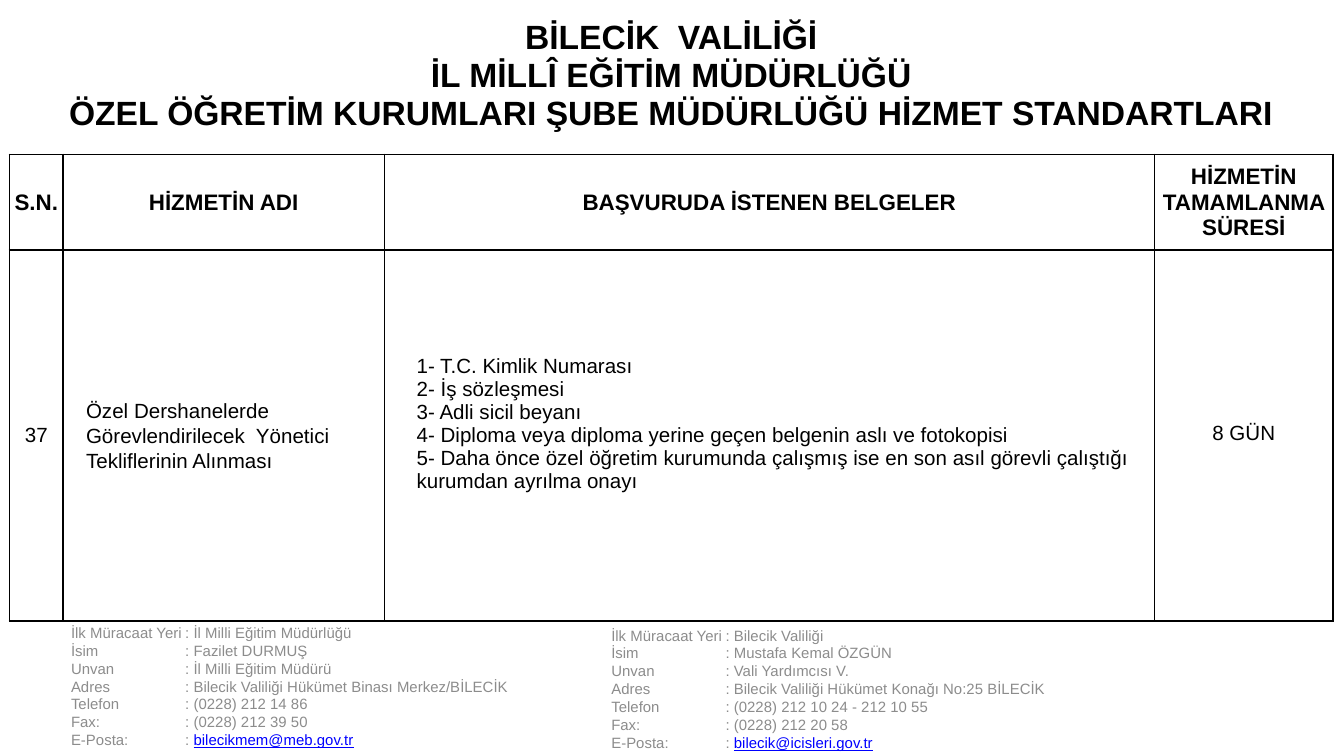
"""Build a service standards slide with one table and two contact blocks."""
from pptx import Presentation
from pptx.dml.color import RGBColor
from pptx.enum.text import MSO_ANCHOR, PP_ALIGN
from pptx.oxml.ns import qn
from pptx.util import Inches, Pt
from lxml.etree import SubElement

BLACK = RGBColor(0, 0, 0)
GRAY = RGBColor(0x8C, 0x8C, 0x8C)
BLUE = RGBColor(0, 0, 0xFF)
PLAIN = "{2D5ABB26-0587-4C30-8999-92F81FD0307C}"

TITLE = ["BİLECİK  VALİLİĞİ", "İL MİLLÎ EĞİTİM MÜDÜRLÜĞÜ",
         "ÖZEL ÖĞRETİM KURUMLARI ŞUBE MÜDÜRLÜĞÜ HİZMET STANDARTLARI"]
HEADS = ["S.N.", "HİZMETİN ADI", "BAŞVURUDA İSTENEN BELGELER",
         "HİZMETİN TAMAMLANMA SÜRESİ"]
NAME = "Özel Dershanelerde Görevlendirilecek  Yönetici Tekliflerinin Alınması"
PAPERS = [
    "1- T.C. Kimlik Numarası",
    "2- İş sözleşmesi",
    "3- Adli sicil beyanı",
    "4- Diploma veya diploma yerine geçen belgenin aslı ve fotokopisi",
    "5- Daha önce özel öğretim kurumunda çalışmış ise en son asıl görevli "
    "çalıştığı kurumdan ayrılma onayı",
]
ROW = [
    (["37"], dict(center=True)),
    ([NAME], dict(indent=0.07, space=1.1)),
    (PAPERS, dict(indent=0.14)),
    (["8 GÜN"], dict(center=True, space=Pt(10))),
]
LABELS = ["İlk Müracaat Yeri", "İsim", "Unvan", "Adres", "Telefon", "Fax:",
          "E-Posta:"]
OFFICES = [
    (0.43, 4.62, ["İl Milli Eğitim Müdürlüğü", "Fazilet DURMUŞ",
                  "İl Milli Eğitim Müdürü",
                  "Bilecik Valiliği Hükümet Binası Merkez/BİLECİK",
                  "(0228) 212 14 86", "(0228) 212 39 50",
                  "bilecikmem@meb.gov.tr"]),
    (4.45, 4.64, ["Bilecik Valiliği", "Mustafa Kemal ÖZGÜN",
                  "Vali Yardımcısı V.",
                  "Bilecik Valiliği Hükümet Konağı No:25 BİLECİK",
                  "(0228) 212 10 24 - 212 10 55", "(0228) 212 20 58",
                  "bilecik@icisleri.gov.tr"]),
]
COLS = [0.4, 2.39, 5.73, 1.33]
ROWS = [1.17, 0.71, 2.76]


def write(frame, lines, size=11, color=BLACK, bold=False, center=False,
          indent=0, space=None, tab=None):
    """Fill a frame; a line is a string or a list of (text, is_mail) runs."""
    frame.word_wrap = True
    for i, line in enumerate(lines):
        para = frame.paragraphs[0] if i == 0 else frame.add_paragraph()
        para.alignment = PP_ALIGN.CENTER if center else PP_ALIGN.LEFT
        if space:
            para.line_spacing = space
        props = para._p.get_or_add_pPr()
        if indent:
            props.set("marL", str(Inches(indent)))
            props.set("indent", "0")
        if tab:
            stops = SubElement(props, qn("a:tabLst"))
            SubElement(stops, qn("a:tab"), pos=str(Inches(tab)), algn="l")
        for text, mail in [(line, False)] if isinstance(line, str) else line:
            run = para.add_run()
            run.text = text
            font = run.font
            font.name, font.size, font.bold = "Arial", Pt(size), bold
            font.color.rgb = BLUE if mail else color
            font.underline = mail


def frame_cell(cell, sides="LRTB", inset=True):
    """Set anchor, insets, borders and an empty fill on a cell."""
    cell.vertical_anchor = MSO_ANCHOR.MIDDLE
    cell.margin_left = cell.margin_right = Inches(0.1 if inset else 0)
    cell.margin_top = cell.margin_bottom = Inches(0.05 if inset else 0)
    props = cell._tc.get_or_add_tcPr()
    for side in sides:
        line = SubElement(props, qn(f"a:ln{side}"), w=str(Pt(1)))
        fill = SubElement(line, qn("a:solidFill"))
        SubElement(fill, qn("a:srgbClr"), val=str(BLACK))
    cell.fill.background()


def add_office(slide, left, top, values):
    """Add one contact block with its values on a shared tab stop."""
    box = slide.shapes.add_textbox(Inches(left), Inches(top), Inches(4.72),
                                   Inches(1))
    box.text_frame.vertical_anchor = MSO_ANCHOR.BOTTOM
    lines = [[(f"{label}\t: ", False), (value, "@" in value)]
             for label, value in zip(LABELS, values)]
    write(box.text_frame, lines, size=8, color=GRAY, tab=0.85)


def add_grid(slide):
    """Add the table with its title, heads and service row."""
    shape = slide.shapes.add_table(
        len(ROWS), len(COLS), Inches(0.07), Inches(-0.02),
        Inches(sum(COLS)), Inches(sum(ROWS)))
    table = shape.table
    table.first_row = table.horz_banding = False
    table._tbl.tblPr[0].text = PLAIN
    for col, width in zip(table.columns, COLS):
        col.width = Inches(width)
    for row, height in zip(table.rows, ROWS):
        row.height = Inches(height)

    for i, (head, (lines, style)) in enumerate(zip(HEADS, ROW)):
        frame_cell(table.cell(0, i), sides="B", inset=False)
        frame_cell(table.cell(1, i), inset=False)
        frame_cell(table.cell(2, i), inset=i > 0)
        write(table.cell(1, i).text_frame, [head], size=12, bold=True,
              center=True)
        write(table.cell(2, i).text_frame, lines, **style)
    table.cell(2, 2).margin_bottom = Inches(0.22)
    table.cell(0, 0).merge(table.cell(0, len(COLS) - 1))
    write(table.cell(0, 0).text_frame, TITLE, size=18, bold=True, center=True)


def main():
    """Build and save the deck."""
    deck = Presentation()
    deck.slide_width = Inches(10)
    deck.slide_height = deck.slide_width * 9 // 16
    slide = deck.slides.add_slide(deck.slide_layouts[6])
    for office in OFFICES:
        add_office(slide, *office)
    add_grid(slide)
    deck.save("out.pptx")


if __name__ == "__main__":
    main()
